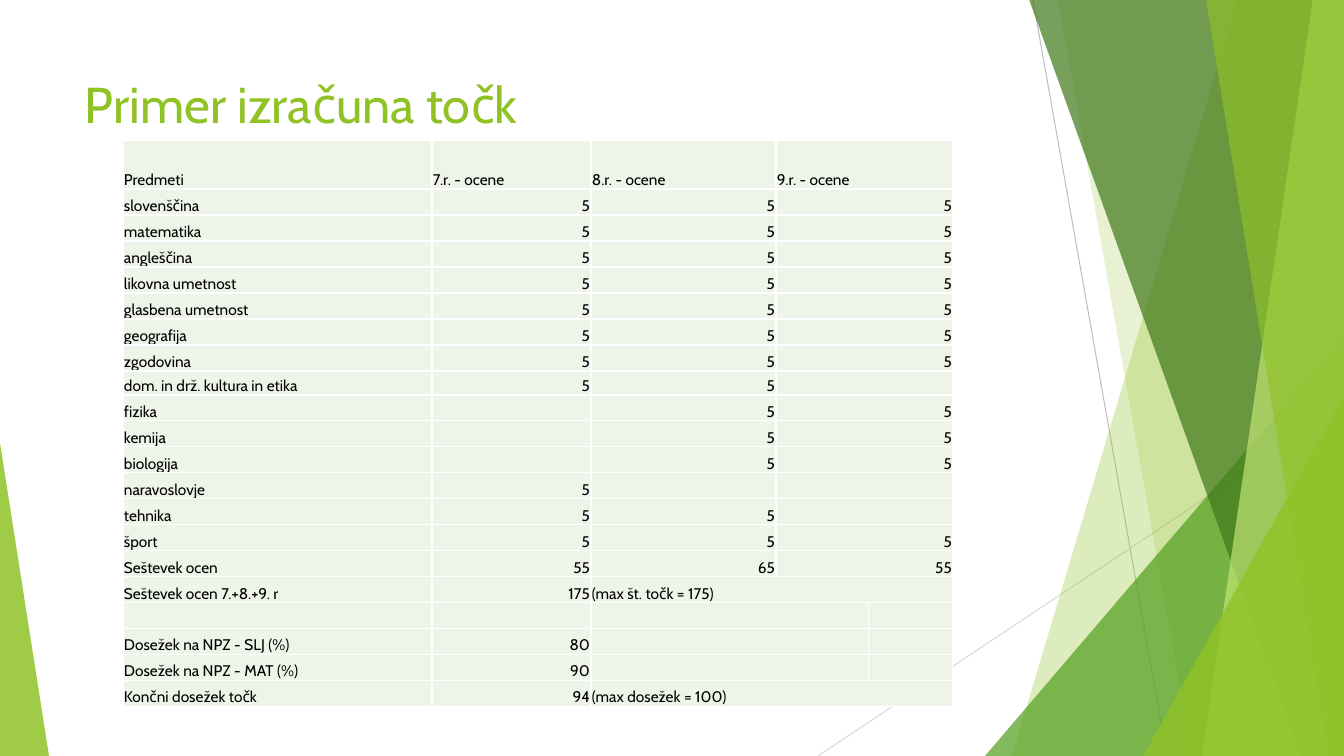
from lxml.etree import SubElement
from pptx import Presentation
from pptx.dml.color import RGBColor
from pptx.enum.shapes import MSO_CONNECTOR as Connector, MSO_SHAPE as Shape
from pptx.enum.text import MSO_ANCHOR as Anchor, PP_ALIGN as Align
from pptx.oxml.ns import qn
from pptx.util import Pt

# Content
FONT = "Cabin"
TITLE = "Primer izračuna točk"
HEADER = ("Predmeti", "7.r. - ocene", "8.r. - ocene", "9.r. - ocene")
GRADES = [
    ("slovenščina", "5", "5", "5"),
    ("matematika", "5", "5", "5"),
    ("angleščina", "5", "5", "5"),
    ("likovna umetnost", "5", "5", "5"),
    ("glasbena umetnost", "5", "5", "5"),
    ("geografija", "5", "5", "5"),
    ("zgodovina", "5", "5", "5"),
    ("dom. in drž. kultura in etika", "5", "5", ""),
    ("fizika", "", "5", "5"),
    ("kemija", "", "5", "5"),
    ("biologija", "", "5", "5"),
    ("naravoslovje", "5", "", ""),
    ("tehnika", "5", "5", ""),
    ("šport", "5", "5", "5"),
    ("Seštevek ocen", "55", "65", "55"),
]
RESULTS = [
    ("Seštevek ocen 7.+8.+9. r", "175", "(max št. točk = 175)"),
    ("", "", "", ""),
    ("Dosežek na NPZ - SLJ (%)", "80", "", ""),
    ("Dosežek na NPZ - MAT (%)", "90", "", ""),
    ("Končni dosežek točk", "94", "(max dosežek = 100)"),
]

# Layout in px
WIDTH, HEIGHT = 1344, 756
SCALE = 914400 / 100.8
TITLE_BOX = (75, 68, 948, 145)
TABLE_LEFT, TABLE_TOP = 123, 140
COLUMNS = (309, 159, 185, 93, 84)
HEADER_HEIGHT, ROW_HEIGHT, TIGHT_HEIGHT = 49, 26, 24
TIGHT_ROW = 8

# Decoration: lines as start, end, colour
LINES = [
    ((1033, 0), (1167, HEIGHT), "BFBFBF"),
    ((WIDTH, 406), (818, HEIGHT), "D9D9D9"),
]
# Bands reach the right edge: top x, bottom x, colour, opacity %
# Triangles stand on the bottom edge: left, top, width, apex, colour, opacity %
BACK_BANDS = [(1238, 1012, "90C226", 30), (1058, 1192, "90C226", 20)]
BACK_TRIANGLES = [(985, 336, 359, 1, "54A021", 72)]
FRONT_BANDS = [
    (1029, 1301, "3F7819", 70),
    (1313, 1202, "C0E474", 70),
    (1206, 1329, "90C226", 65),
]
FRONT_TRIANGLES = [(1143, 396, 201, 1, "90C226", 80), (0, 443, 49, 0, "90C226", 85)]


def px(value):
    return round(value * SCALE)


def color(value):
    return RGBColor.from_string(value)


def paint(shape, fill, opacity):
    shape.shadow.inherit = False
    shape.fill.solid()
    shape.fill.fore_color.rgb = color(fill)
    shape.line.fill.background()
    tint = shape.fill._xPr.find(qn("a:solidFill"))[0]
    SubElement(tint, qn("a:alpha"), val=str(opacity * 1000))


def add_line(slide, start, end, stroke):
    line = slide.shapes.add_connector(Connector.STRAIGHT, *map(px, start + end))
    line.line.color.rgb = color(stroke)
    line.line.width = Pt(0.75)
    SubElement(line._element.spPr, qn("a:effectLst"))


def add_band(slide, top_x, bottom_x, fill, opacity):
    builder = slide.shapes.build_freeform(top_x, -1, scale=SCALE)
    builder.add_line_segments([(WIDTH, -1), (WIDTH, HEIGHT), (bottom_x, HEIGHT)])
    paint(builder.convert_to_shape(), fill, opacity)


def add_triangle(slide, left, top, width, apex, fill, opacity):
    box = map(px, (left, top, width, HEIGHT - top))
    triangle = slide.shapes.add_shape(Shape.ISOSCELES_TRIANGLE, *box)
    triangle.adjustments[0] = apex
    paint(triangle, fill, opacity)


def style_run(run, size, tint):
    run.font.name = FONT
    run.font.size = Pt(size)
    run.font.color.rgb = color(tint)


def add_title(slide):
    frame = slide.shapes.add_textbox(*map(px, TITLE_BOX)).text_frame
    frame.word_wrap = True
    frame.vertical_anchor = Anchor.TOP
    frame.text = TITLE
    style_run(frame.paragraphs[0].runs[0], 36, "90C226")


def style_cell(cell):
    cell.margin_left = cell.margin_right = cell.margin_top = px(1)
    cell.margin_bottom = 0
    cell.vertical_anchor = Anchor.BOTTOM
    properties = cell._tc.get_or_add_tcPr()
    for side in ("a:lnL", "a:lnR", "a:lnT", "a:lnB"):
        border = SubElement(properties, qn(side), w=str(Pt(1)))
        SubElement(SubElement(border, qn("a:solidFill")), qn("a:srgbClr"), val="FFFFFF")
    cell.fill.solid()
    cell.fill.fore_color.rgb = color("EEF4E8")


def write_cell(cell, text):
    paragraph = cell.text_frame.paragraphs[0]
    if not text:
        SubElement(paragraph._p, qn("a:endParaRPr"), sz="1100")
        return
    paragraph.text = text
    paragraph.alignment = Align.RIGHT if text.isdigit() else Align.LEFT
    style_run(paragraph.runs[0], 11, "000000")


def add_grades_table(slide):
    rows = [HEADER] + GRADES + RESULTS
    heights = [HEADER_HEIGHT] + [ROW_HEIGHT] * (len(rows) - 1)
    heights[TIGHT_ROW] = TIGHT_HEIGHT
    box = map(px, (TABLE_LEFT, TABLE_TOP, sum(COLUMNS), sum(heights)))
    table = slide.shapes.add_table(len(rows), len(COLUMNS), *box).table
    table.first_row = table.horz_banding = False
    for column, width in zip(table.columns, COLUMNS):
        column.width = px(width)
    for row, height in zip(table.rows, heights):
        row.height = px(height)
    for cell in table.iter_cells():
        style_cell(cell)

    for index, texts in enumerate(rows):
        # Notes span three columns, blank results the middle two, grades the last two
        if len(texts) == 3:
            first, last = 2, 4
        elif index > len(GRADES):
            first, last = 2, 3
        else:
            first, last = 3, 4
        table.cell(index, first).merge(table.cell(index, last))
        visible = [cell for cell in table.rows[index].cells if not cell.is_spanned]
        for cell, text in zip(visible, texts):
            write_cell(cell, text)


def main():
    presentation = Presentation()
    presentation.slide_width, presentation.slide_height = px(WIDTH), px(HEIGHT)
    slide = presentation.slides.add_slide(presentation.slide_layouts[6])

    # Background decoration, back to front
    for line in LINES:
        add_line(slide, *line)
    for bands, triangles in ((BACK_BANDS, BACK_TRIANGLES), (FRONT_BANDS, FRONT_TRIANGLES)):
        for band in bands:
            add_band(slide, *band)
        for triangle in triangles:
            add_triangle(slide, *triangle)

    # Title and table
    add_title(slide)
    add_grades_table(slide)
    presentation.save("out.pptx")


if __name__ == "__main__":
    main()
